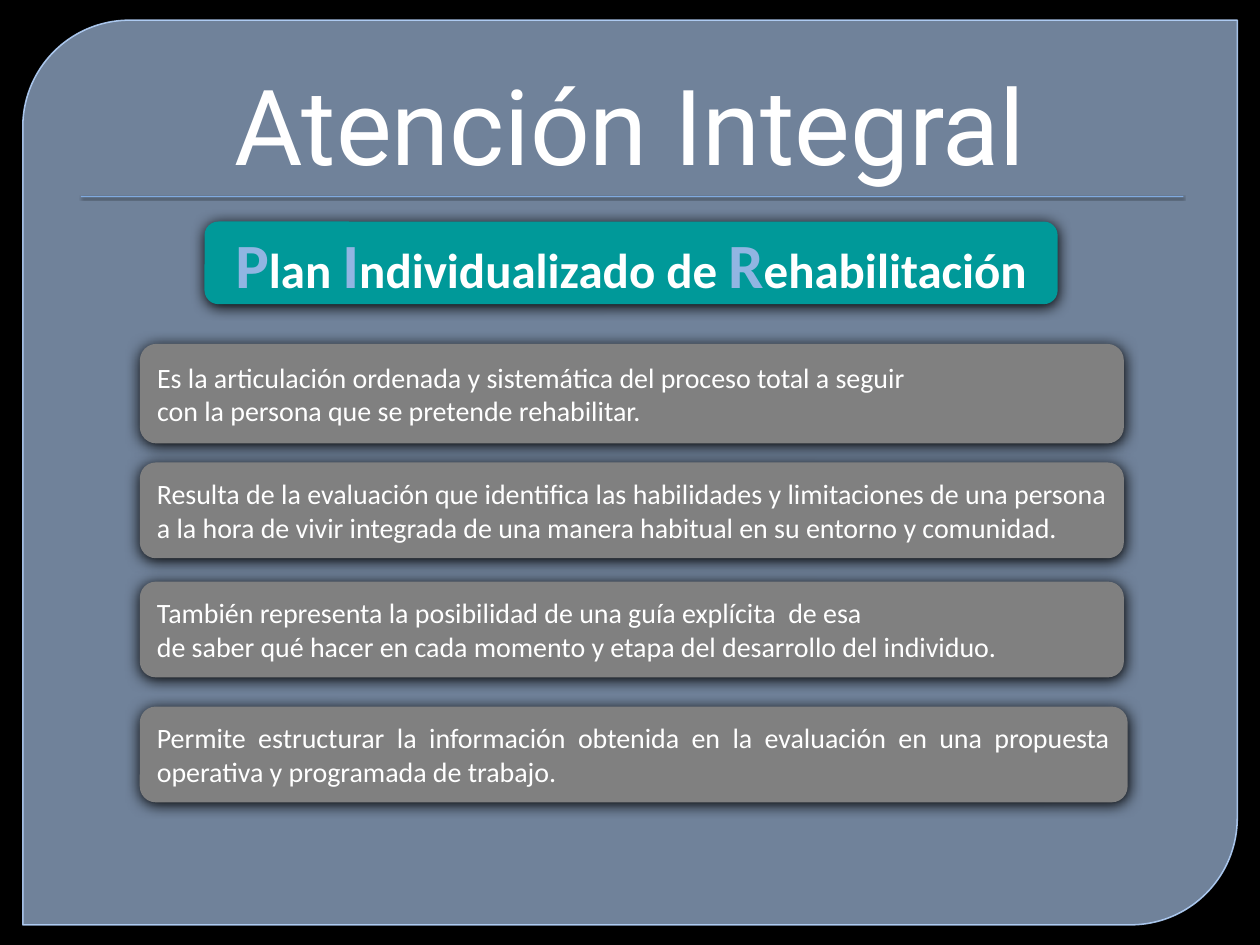
from dataclasses import dataclass

import pptx
import pptx.dml.color
import pptx.enum.shapes
import pptx.enum.text
import pptx.oxml
import pptx.oxml.ns
import pptx.util

Pt = pptx.util.Pt
Shapes = pptx.enum.shapes.MSO_SHAPE
Align = pptx.enum.text.PP_ALIGN
Anchor = pptx.enum.text.MSO_ANCHOR


@dataclass(frozen=True)
class Theme:
    background: str = "000000"
    panel: str = "ADC9EE"
    panel_line: str = "B7D6FF"
    rule: str = "80AADF"
    heading: str = "009999"
    card: str = "808080"
    text: str = "FFFFFF"
    initial: str = "91B5E2"
    shadow: str = "000000"
    title_font: str = "Roboto"
    body_font: str = "Calibri"
    title_size: float = 60
    initial_size: float = 36
    heading_size: float = 28
    card_size: float = 16


THEME = Theme()

HEADING_RUNS = [
    ("P", True), ("lan ", False),
    ("I", True), ("ndividualizado de ", False),
    ("R", True), ("ehabilitación", False),
]

CARDS = [
    ((79.9, 196.5, 562.3, 56.9), [
        "Es la articulación ordenada y sistemática del proceso total a seguir",
        "con la persona que se pretende rehabilitar.",
    ]),
    ((79.9, 264.3, 562.3, 54.7), [
        "Resulta de la evaluación que identifica las habilidades y limitaciones de una persona "
        "a la hora de vivir integrada de una manera habitual en su entorno y comunidad.",
    ]),
    ((79.9, 332.4, 562.3, 54.7), [
        "También representa la posibilidad de una guía explícita  de esa",
        "de saber qué hacer en cada momento y etapa del desarrollo del individuo.",
    ]),
    ((79.9, 403.8, 564.5, 54.7), [
        "Permite estructurar la información obtenida en la evaluación en una propuesta "
        "operativa y programada de trabajo.",
    ]),
]


def rgb(color):
    return pptx.dml.color.RGBColor.from_string(color)


def set_alpha(color_element, percent):
    alpha = pptx.oxml.parse_xml(
        f'<a:alpha {pptx.oxml.ns.nsdecls("a")} val="{percent * 1000}"/>')
    color_element.append(alpha)


def add_shadow(shape, blur, opacity):
    effects = pptx.oxml.parse_xml(
        f'<a:effectLst {pptx.oxml.ns.nsdecls("a")}>'
        f'<a:outerShdw blurRad="{Pt(blur)}" dist="{Pt(1)}" dir="5400000" rotWithShape="0">'
        f'<a:srgbClr val="{THEME.shadow}"><a:alpha val="{opacity * 1000}"/></a:srgbClr>'
        '</a:outerShdw></a:effectLst>')
    shape.element.spPr.append(effects)


def add_filled_shape(slide, kind, box, color):
    shape = slide.shapes.add_shape(kind, *map(Pt, box))
    shape.fill.solid()
    shape.fill.fore_color.rgb = rgb(color)
    shape.line.fill.background()
    return shape


def add_panel(slide, box):
    left, top, width, height = box
    panel = add_filled_shape(slide, Shapes.ROUND_2_DIAG_RECTANGLE, box, THEME.panel)
    panel.shadow.inherit = False
    panel.adjustments[0] = 0.118
    panel.adjustments[1] = 0
    panel.line.color.rgb = rgb(THEME.panel_line)
    panel.line.width = Pt(0.87)
    for percent, color in zip((65, 88), panel.element.spPr.iter(pptx.oxml.ns.qn("a:srgbClr"))):
        set_alpha(color, percent)
    rule_box = (left + 33.2, top + 100.4, width - 64, 0.8)
    rule = add_filled_shape(slide, Shapes.RECTANGLE, rule_box, THEME.rule)
    add_shadow(rule, 1, 75)


def place_title(slide, box, text):
    title = slide.shapes.title
    title.left, title.top, title.width, title.height = map(Pt, box)
    frame = title.text_frame
    frame.text = text
    frame.word_wrap = True
    frame.auto_size = pptx.enum.text.MSO_AUTO_SIZE.NONE
    frame.vertical_anchor = Anchor.BOTTOM
    paragraph = frame.paragraphs[0]
    paragraph.alignment = Align.CENTER
    paragraph.font.name = THEME.title_font
    paragraph.font.size = Pt(THEME.title_size)
    paragraph.font.color.rgb = rgb(THEME.text)
    title.element.getparent().append(title.element)


def add_block(slide, box, color):
    block = add_filled_shape(slide, Shapes.ROUNDED_RECTANGLE, box, color)
    add_shadow(block, 8.5, 100)
    block.text_frame.word_wrap = True
    block.text_frame.vertical_anchor = Anchor.MIDDLE
    return block.text_frame


def add_heading(slide, box, runs):
    paragraph = add_block(slide, box, THEME.heading).paragraphs[0]
    paragraph.alignment = Align.CENTER
    paragraph.font.name = THEME.body_font
    paragraph.font.bold = True
    for text, is_initial in runs:
        run = paragraph.add_run()
        run.text = text
        run.font.size = Pt(THEME.initial_size if is_initial else THEME.heading_size)
        run.font.color.rgb = rgb(THEME.initial if is_initial else THEME.text)


def add_card(slide, box, lines):
    frame = add_block(slide, box, THEME.card)
    frame.text = "\n".join(lines)
    for paragraph in frame.paragraphs:
        paragraph.alignment = Align.JUSTIFY
        paragraph.font.name = THEME.body_font
        paragraph.font.size = Pt(THEME.card_size)
        paragraph.font.color.rgb = rgb(THEME.text)


def main():
    presentation = pptx.Presentation()
    presentation.slide_width = Pt(720)
    presentation.slide_height = Pt(540)
    slide = presentation.slides.add_slide(presentation.slide_layouts[5])
    slide.background.fill.solid()
    slide.background.fill.fore_color.rgb = rgb(THEME.background)

    add_panel(slide, (13, 11.5, 694, 517))
    place_title(slide, (36, 20.2, 648, 90), "Atención Integral")
    add_heading(slide, (116.9, 126.6, 487.5, 47.2), HEADING_RUNS)
    for box, lines in CARDS:
        add_card(slide, box, lines)

    presentation.save("out.pptx")


if __name__ == "__main__":
    main()
